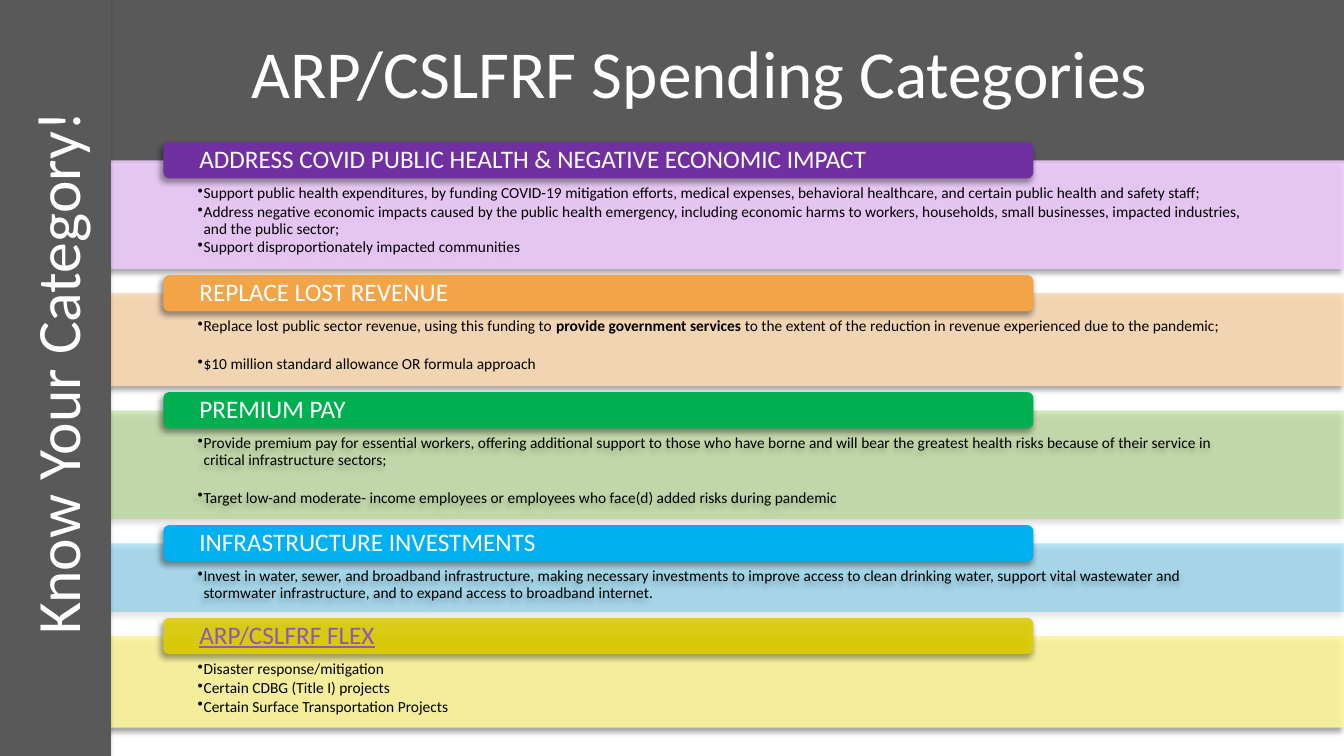
import lxml.etree
import pptx
import pptx.dml.color
import pptx.enum.shapes
import pptx.enum.text
import pptx.oxml.ns
import pptx.util

PX = 9144  # EMU per px, 100 px to the inch
FONT = "Calibri"
SHAPE = pptx.enum.shapes.MSO_SHAPE
ALIGN = pptx.enum.text.PP_ALIGN
ANCHOR = pptx.enum.text.MSO_ANCHOR

COLORS = {
    "grey": "595959", "white": "FFFFFF", "black": "000000", "link": "8E58B6",
    "purple": "7030A0", "lilac": "ECCAFA",
    "orange": "F3A447", "peach": "FADBB5",
    "green": "00B050", "lime": "92D050",
    "blue": "00B0F0",
    "gold": "DFCF04", "lemon": "FDF69C",
}

BAND_GAP = 24
TAB_H = 36
BULLET_GAP = 13.5

# Bold words stand between ** marks; gap is the extra space between bullets.
SECTIONS = [
    dict(title="ADDRESS COVID PUBLIC HEALTH & NEGATIVE ECONOMIC IMPACT",
         h=108, tab="purple", band="lilac", alpha=90, items=[
             "Support public health expenditures, by funding COVID-19 mitigation efforts, medical expenses, "
             "behavioral healthcare, and certain public health and safety staff;",
             "Address negative economic impacts caused by the public health emergency, including economic harms "
             "to workers, households, small businesses, impacted industries, and the public sector;",
             "Support disproportionately impacted communities"]),
    dict(title="REPLACE LOST REVENUE",
         h=92, tab="orange", band="peach", alpha=90, gap=BULLET_GAP, items=[
             "Replace lost public sector revenue, using this funding to **provide government services **"
             "to the extent of the reduction in revenue experienced due to the pandemic;",
             "$10 million standard allowance OR formula approach"]),
    dict(title="PREMIUM PAY",
         h=108, tab="green", band="lime", alpha=35, gap=BULLET_GAP, items=[
             "Provide premium pay for essential workers, offering additional support to those who have borne and "
             "will bear the greatest health risks because of their service in critical infrastructure sectors;",
             "Target low-and moderate- income employees or employees who face(d) added risks during pandemic"]),
    dict(title="INFRASTRUCTURE INVESTMENTS",
         h=68, tab="blue", band="blue", alpha=27, items=[
             "Invest in water, sewer, and broadband infrastructure, making necessary investments to improve access "
             "to clean drinking water, support vital wastewater and stormwater infrastructure, and to expand "
             "access to broadband internet."]),
    dict(title="ARP/CSLFRF FLEX",
         h=91, tab="gold", band="lemon", alpha=90, tab_alpha=90, link=True, items=[
             "Disaster response/mitigation",
             "Certain CDBG (Title I) projects",
             "Certain Surface Transportation Projects"]),
]


def rgb(name):
    return pptx.dml.color.RGBColor.from_string(COLORS[name])


def add_child(parent, tag, **attributes):
    return lxml.etree.SubElement(parent, pptx.oxml.ns.qn(tag), attributes)


def place(sp, x, y, w, h):
    sp.left, sp.top, sp.width, sp.height = (v * PX for v in (x, y, w, h))


def add_shadow(sp):
    effects = add_child(sp.element.spPr, "a:effectLst")
    shadow = add_child(effects, "a:outerShdw", blurRad="50800", dist="38100", dir="8100000",
                       algn="tr", rotWithShape="0")
    add_child(add_child(shadow, "a:srgbClr", val=COLORS["black"]), "a:alpha", val="40000")


def add_block(slide, kind, box, color, alpha=100, shadow=True):
    """Add a borderless filled shape; alpha is its opacity in percent."""
    sp = slide.shapes.add_shape(kind, *(v * PX for v in box))
    sp.fill.solid()
    sp.fill.fore_color.rgb = rgb(color)
    if alpha < 100:
        clr = sp.element.spPr.find(".//" + pptx.oxml.ns.qn("a:srgbClr"))
        add_child(clr, "a:alpha", val=str(alpha * 1000))
    sp.line.fill.background()
    if shadow:
        add_shadow(sp)
    else:
        sp.shadow.inherit = False
    return sp


def set_frame(sp, anchor, insets):
    tf = sp.text_frame
    tf.word_wrap = True
    tf.vertical_anchor = anchor
    tf.margin_left, tf.margin_top, tf.margin_right, tf.margin_bottom = (v * PX for v in insets)
    return tf


def style(p, size, color, align=ALIGN.LEFT, spacing=0.9):
    p.alignment = align
    p.line_spacing = spacing
    p.font.name = FONT
    p.font.size = pptx.util.Pt(size)
    p.font.color.rgb = rgb(color)


def add_bullet(p, text, before):
    p.level = 1
    p.space_before = pptx.util.Pt(before)
    p.space_after = pptx.util.Pt(1.5)
    pPr = p._p.get_or_add_pPr()
    pPr.set("marL", str(6 * PX))
    pPr.set("indent", str(-6 * PX))
    add_child(pPr, "a:buChar", char="•")
    style(p, 11, "black")
    for i, part in enumerate(text.split("**")):
        r = p.add_run()
        r.text = part
        if i % 2:
            r.font.bold = True


def draw_header(slide, x, y, w, h):
    add_block(slide, SHAPE.RECTANGLE, (x, y, w, h), "grey", shadow=False)
    title = slide.shapes.title
    title.element.getparent().append(title.element)  # bring in front of the header
    place(title, x + 98, y + 24, w - 141, h - 48)
    tf = set_frame(title, ANCHOR.MIDDLE, (10, 5, 10, 5))
    tf.auto_size = pptx.enum.text.MSO_AUTO_SIZE.NONE
    tf.text = "ARP/CSLFRF Spending Categories"
    style(tf.paragraphs[0], 48, "white", ALIGN.CENTER)


def draw_section(slide, x, y, w, section):
    """Draw a band of bullets with its heading tab across the top edge."""
    band = add_block(slide, SHAPE.RECTANGLE, (x, y, w, section["h"]), section["band"], section["alpha"])
    tf = set_frame(band, ANCHOR.TOP, (96, 25, 96, 9))
    for i, item in enumerate(section["items"]):
        p = tf.add_paragraph() if i else tf.paragraphs[0]
        add_bullet(p, item, section.get("gap", 0) if i else 0)

    tab = add_block(slide, SHAPE.ROUNDED_RECTANGLE, (x + 62, y - TAB_H // 2, 863, TAB_H),
                    section["tab"], section.get("tab_alpha", 100))
    tf = set_frame(tab, ANCHOR.MIDDLE, (34, 0, 34, 0))
    tf.text = section["title"]
    p = tf.paragraphs[0]
    is_link = section.get("link", False)
    style(p, 18, "link" if is_link else "white")
    if is_link:
        p.font.underline = True


def draw_sidebar(slide, x, y, w, h):
    """Fill the upright box with a bar whose text reads upwards."""
    box = (x + (w - h) // 2, y + (h - w) // 2, h, w)
    bar = add_block(slide, SHAPE.RECTANGLE, box, "grey")
    bar.rotation = 270
    tf = set_frame(bar, ANCHOR.MIDDLE, (10, 5, 10, 5))
    tf.text = "Know Your Category!"
    style(tf.paragraphs[0], 44, "white", ALIGN.CENTER, 1.0)


def main():
    prs = pptx.Presentation()
    prs.slide_width, prs.slide_height = 1333 * PX, 750 * PX
    slide = prs.slides.add_slide(prs.slide_layouts[5])
    draw_header(slide, 0, -10, 1333, 172)
    y = 159
    for section in SECTIONS:
        draw_section(slide, 100, y, 1233, section)
        y += section["h"] + BAND_GAP
    draw_sidebar(slide, 0, -10, 110, 760)
    prs.save("out.pptx")


if __name__ == "__main__":
    main()
